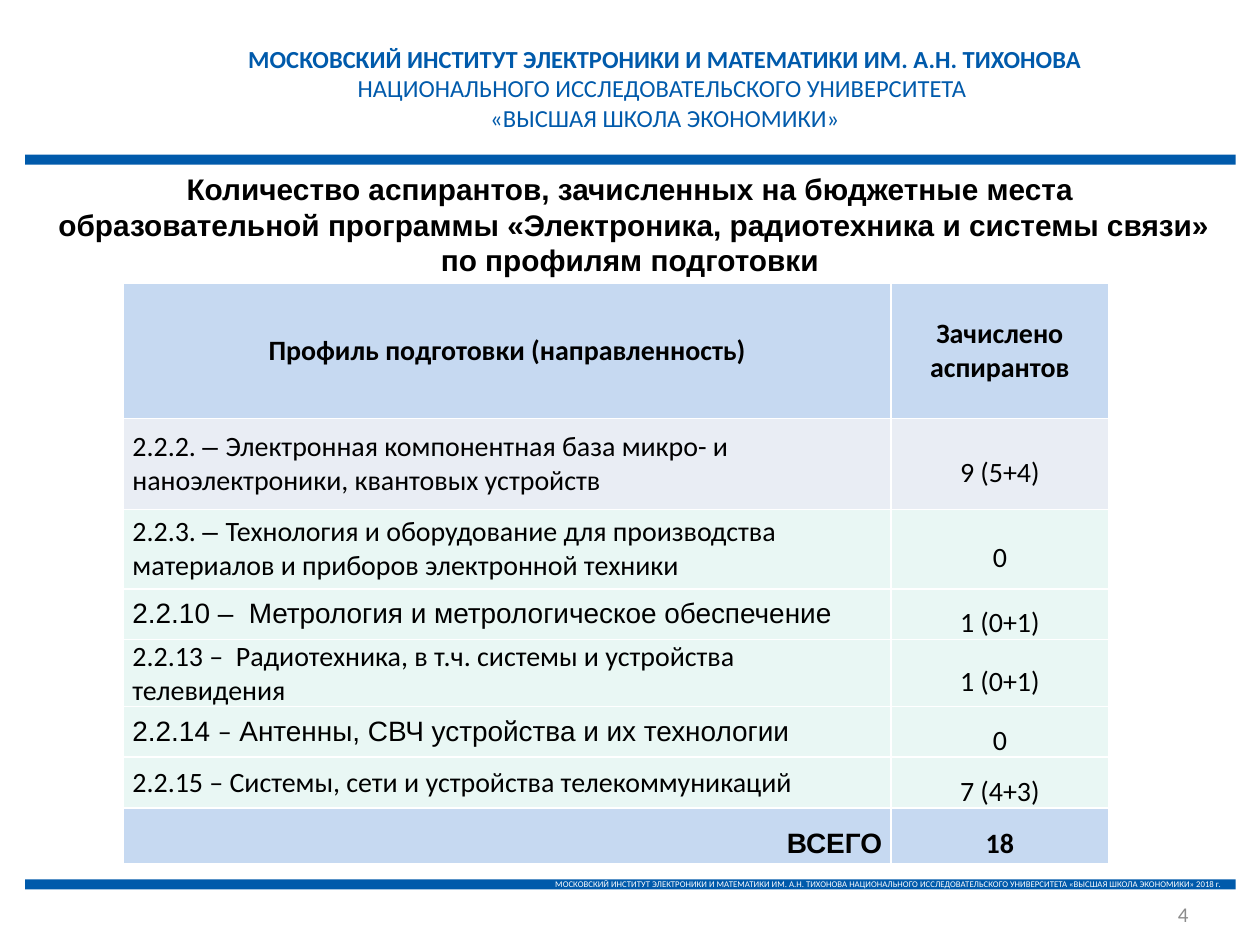
import dataclasses

import lxml.etree
import pptx
import pptx.dml.color
import pptx.enum.shapes
import pptx.enum.text
import pptx.oxml.ns
import pptx.util

Cm = pptx.util.Cm
Align = pptx.enum.text.PP_ALIGN
Anchor = pptx.enum.text.MSO_ANCHOR


@dataclasses.dataclass(frozen=True)
class Theme:
    body: str = "Calibri"
    heading: str = "Arial"
    blue: str = "005AAB"
    white: str = "FFFFFF"
    black: str = "000000"
    grey: str = "8C8C8C"
    strong_row: str = "C6D9F1"
    first_row: str = "E9EDF4"
    plain_row: str = "E9F7F4"
    institute_size: float = 14
    title_size: float = 17
    table_size: float = 16
    number_size: float = 12
    footer_size: float = 5


def rgb(value):
    return pptx.dml.color.RGBColor.from_string(value)


def apply(target, values):
    for name, value in values.items():
        setattr(target, name, value)


class SlideBuilder:
    def __init__(self, presentation, theme):
        self.theme = theme
        self.slide = presentation.slides.add_slide(presentation.slide_layouts[5])

    def fill_text(self, frame, paragraphs, color, size, bold=False, **paragraph_format):
        """Fill a frame; each paragraph is a list of (text, font, optional bold) runs."""
        for index, runs in enumerate(paragraphs):
            paragraph = frame.paragraphs[0] if index == 0 else frame.add_paragraph()
            apply(paragraph, paragraph_format)
            for text, font, *own_bold in runs:
                for line_index, line in enumerate(text.split("\n")):
                    if line_index:
                        paragraph.add_line_break()
                    run = paragraph.add_run()
                    run.text = line
                    apply(run.font, {"name": font, "size": pptx.util.Pt(size),
                                     "bold": own_bold[0] if own_bold else bold})
                    run.font.color.rgb = rgb(color)

    def bar(self, box):
        bar = self.slide.shapes.add_shape(
            pptx.enum.shapes.MSO_SHAPE.RECTANGLE, *map(Cm, box))
        bar.shadow.inherit = False
        bar.fill.solid()
        bar.fill.fore_color.rgb = rgb(self.theme.blue)
        bar.line.fill.background()
        apply(bar.text_frame, {"word_wrap": True, "vertical_anchor": Anchor.MIDDLE})
        return bar

    def text(self, box, paragraphs, color, size, anchor=Anchor.TOP, align=Align.CENTER):
        frame = self.slide.shapes.add_textbox(*map(Cm, box)).text_frame
        apply(frame, {"word_wrap": True, "vertical_anchor": anchor})
        self.fill_text(frame, paragraphs, color, size, alignment=align)

    def title(self, box, lines):
        title = self.slide.shapes.title
        apply(title, dict(zip(("left", "top", "width", "height"), map(Cm, box))))
        apply(title.text_frame, {"word_wrap": True, "vertical_anchor": Anchor.MIDDLE})
        self.fill_text(title.text_frame, [[(line, self.theme.heading)] for line in lines],
                       self.theme.black, self.theme.title_size, bold=True,
                       alignment=Align.CENTER)

    def cell(self, cell, runs, fill, side_margin, **text_format):
        apply(cell, {"margin_left": Cm(side_margin), "margin_right": Cm(side_margin),
                     "margin_top": 0, "margin_bottom": 0,
                     "vertical_anchor": Anchor.MIDDLE})
        self.borders(cell)
        cell.fill.solid()
        cell.fill.fore_color.rgb = rgb(fill)
        self.fill_text(cell.text_frame, [runs], self.theme.black, self.theme.table_size,
                       **text_format)

    def borders(self, cell):
        qn = pptx.oxml.ns.qn
        properties = cell._tc.get_or_add_tcPr()
        for side in ("lnL", "lnR", "lnT", "lnB"):
            line = lxml.etree.SubElement(properties, qn(f"a:{side}"),
                                         w=str(pptx.util.Pt(1)))
            solid = lxml.etree.SubElement(line, qn("a:solidFill"))
            lxml.etree.SubElement(solid, qn("a:srgbClr"), val=self.theme.white)

    def table(self, left, top, widths, heights, rows):
        """Draw a table whose first row is the heading and last row the total."""
        theme = self.theme
        table = self.slide.shapes.add_table(
            len(rows), len(widths), Cm(left), Cm(top),
            Cm(sum(widths)), Cm(sum(heights))).table
        table.horz_banding = False
        for column, width in zip(table.columns, widths):
            column.width = Cm(width)
        last = len(rows) - 1
        fills = {0: theme.strong_row, 1: theme.first_row, last: theme.strong_row}
        profile_aligns = {0: Align.CENTER, last: Align.RIGHT}
        for index, (profile, enrolled) in enumerate(rows):
            table.rows[index].height = Cm(heights[index])
            fill = fills.get(index, theme.plain_row)
            bold = index in (0, last)
            self.cell(table.cell(index, 0), profile, fill, 0.18, bold=bold,
                      alignment=profile_aligns.get(index, Align.LEFT),
                      line_spacing=1.5 if index == last else 1.0)
            self.cell(table.cell(index, 1), [(enrolled, theme.body)], fill, 0, bold=bold,
                      alignment=Align.CENTER, line_spacing=1.5 if index else 1.0)


def main():
    theme = Theme()
    body, heading = theme.body, theme.heading
    presentation = pptx.Presentation()
    apply(presentation, {"slide_width": Cm(25.4), "slide_height": Cm(19.05)})
    builder = SlideBuilder(presentation, theme)

    footer = builder.bar((0.51, 17.73, 24.4, 0.2))
    builder.fill_text(footer.text_frame, [[(
        "МОСКОВСКИЙ ИНСТИТУТ ЭЛЕКТРОНИКИ И МАТЕМАТИКИ ИМ. А.Н. ТИХОНОВА "
        "НАЦИОНАЛЬНОГО ИССЛЕДОВАТЕЛЬСКОГО УНИВЕРСИТЕТА "
        "«ВЫСШАЯ ШКОЛА ЭКОНОМИКИ» 2018 г.", body)]],
        theme.white, theme.footer_size, alignment=Align.RIGHT)
    builder.bar((0.51, 3.12, 24.4, 0.2))

    builder.text((4.72, 0.76, 17.37, 2.06), [
        [("МОСКОВСКИЙ ИНСТИТУТ ЭЛЕКТРОНИКИ И МАТЕМАТИКИ ИМ. А.Н. ТИХОНОВА", body, True)],
        [("НАЦИОНАЛЬНОГО ИССЛЕДОВАТЕЛЬСКОГО УНИВЕРСИТЕТА \n«ВЫСШАЯ ШКОЛА ЭКОНОМИКИ»",
          body)],
    ], theme.blue, theme.institute_size)

    builder.title((0.51, 3.3, 24.38, 2.44), [
        "Количество аспирантов, зачисленных на бюджетные места",
        " образовательной программы «Электроника, радиотехника и системы связи»",
        "по профилям подготовки",
    ])

    builder.table(2.49, 5.72, (15.47, 4.39), (2.72, 1.83, 1.6, *[1.02] * 4, 1.12), [
        ([("Профиль подготовки (направленность)", body)], "Зачислено аспирантов"),
        ([("2.2.2. ", body), ("– ", heading),
          ("Электронная компонентная база микро- и наноэлектроники, "
           "квантовых устройств", body)], "9 (5+4)"),
        ([("2.2.3. ", body), ("– ", heading),
          ("Технология и оборудование для производства материалов "
           "и приборов электронной техники", body)], "0"),
        ([("2.2.10 –  Метрология и метрологическое обеспечение", heading)], "1 (0+1)"),
        ([("2.2.13 –  Радиотехника, в т.ч. системы и устройства телевидения", body)],
         "1 (0+1)"),
        ([("2.2.14 ", heading), ("–", body),
          (" Антенны, СВЧ устройства и их технологии", heading)], "0"),
        ([("2.2.15 – Системы, сети и устройства телекоммуникаций", body)], "7 (4+3)"),
        ([("ВСЕГО", heading)], "18"),
    ])

    builder.text((18.29, 18.14, 5.92, 0.56), [[("4", body)]], theme.grey,
                 theme.number_size, Anchor.MIDDLE, Align.RIGHT)
    presentation.save("out.pptx")


if __name__ == "__main__":
    main()
